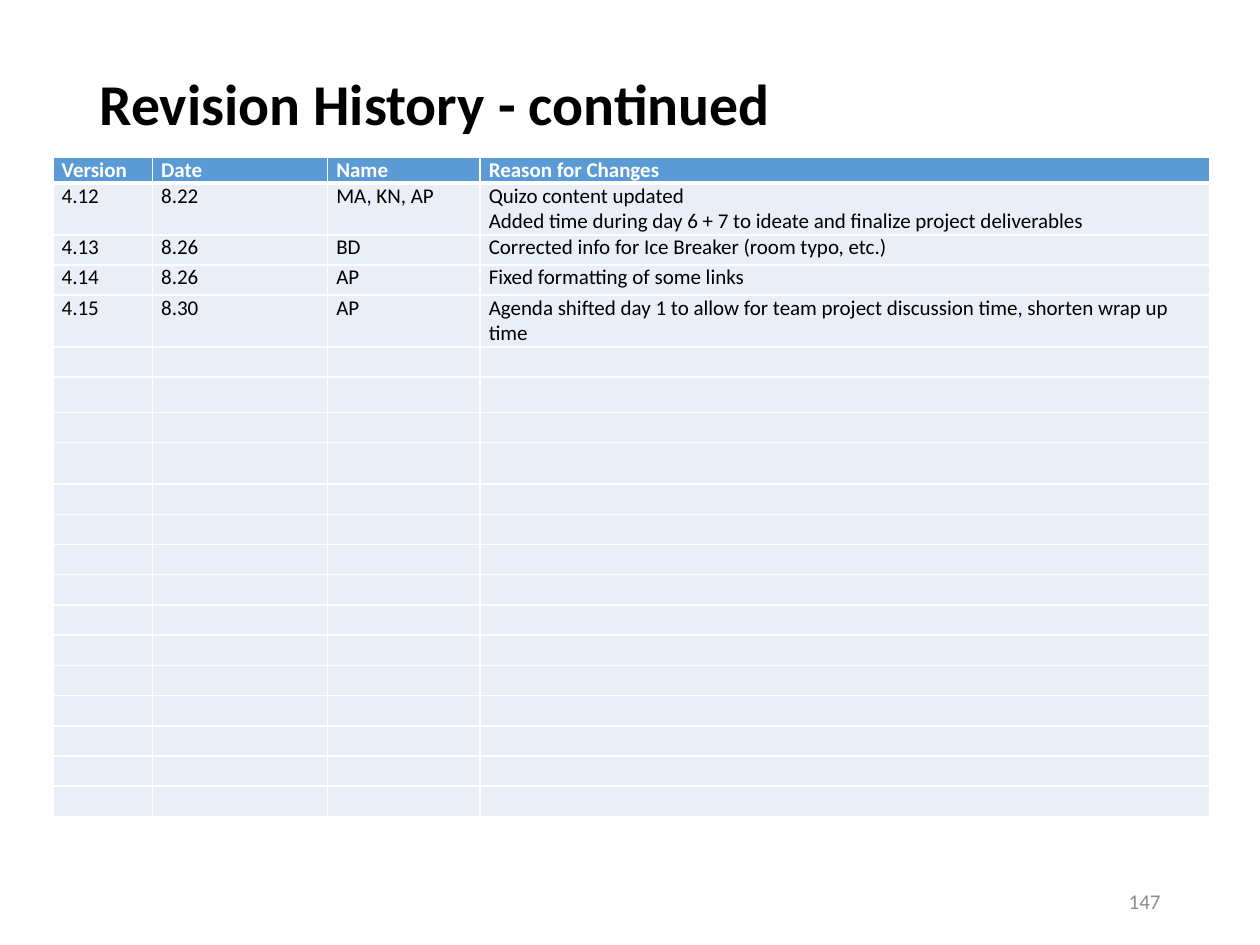
import lxml.etree
import pptx
import pptx.dml.color
import pptx.enum.text
import pptx.oxml.ns
import pptx.util

theme = {
    "font": "Calibri",
    "title_size": 33,
    "body_size": 12,
    "black": "000000",
    "white": "FFFFFF",
    "header": "5B9BD5",
    "body": "EAEFF7",
    "muted": "8C8C8C",
}

headings = ["Version", "Date", "Name", "Reason for Changes"]
revisions = [
    ["4.12", "8.22", "MA, KN, AP",
     "Quizo content updated\nAdded time during day 6 + 7 to ideate and finalize project deliverables"],
    ["4.13", "8.26", "BD", "Corrected info for Ice Breaker (room typo, etc.)"],
    ["4.14", "8.26", "AP", "Fixed formatting of some links"],
    ["4.15", "8.30", "AP",
     "Agenda shifted day 1 to allow for team project discussion time, shorten wrap up time"],
]
blank_rows = 15
rows = [headings] + revisions + [[""] * len(headings)] * blank_rows

presentation = pptx.Presentation()
presentation.slide_width = pptx.util.Inches(10)
presentation.slide_height = pptx.util.Inches(7.5)
unit = presentation.slide_width / 100
slide = presentation.slides.add_slide(presentation.slide_layouts[5])


def add_run(paragraph, text, size, color, bold=False):
    run = paragraph.add_run()
    run.text = text
    run.font.name = theme["font"]
    run.font.size = pptx.util.Pt(size)
    run.font.bold = bold
    run.font.color.rgb = pptx.dml.color.RGBColor.from_string(color)


def add_element(parent, tag, **attributes):
    return lxml.etree.SubElement(parent, pptx.oxml.ns.qn(tag), **attributes)


title = slide.shapes.title
title.left, title.top, title.width, title.height = [
    int(unit * share) for share in (6.9, 4, 86.2, 14.5)
]
title.text_frame.auto_size = pptx.enum.text.MSO_AUTO_SIZE.NONE
title.text_frame.vertical_anchor = pptx.enum.text.MSO_ANCHOR.MIDDLE
paragraph = title.text_frame.paragraphs[0]
paragraph.alignment = pptx.enum.text.PP_ALIGN.LEFT
paragraph.line_spacing = 0.9
add_run(paragraph, "Revision History - continued", theme["title_size"], theme["black"], True)
paragraph.add_line_break()
title_size = str(theme["title_size"] * 100)
add_element(paragraph._p[-1], "a:rPr", sz=title_size)
add_element(paragraph._p, "a:endParaRPr", sz=title_size)

column_shares = [7.9, 13.9, 12.1, 57.9]
row_shares = [2.4] * len(rows)
for row_index, share in {0: 2, 1: 4.1, 4: 4.1, 6: 2.8, 8: 3.3}.items():
    row_shares[row_index] = share

frame = slide.shapes.add_table(
    len(rows), len(headings), int(unit * 4.2), int(unit * 12.5),
    int(unit * sum(column_shares)), int(unit * sum(row_shares)),
)
table = frame.table
table.horz_banding = False
for column, share in zip(table.columns, column_shares):
    column.width = int(unit * share)

for row_index, texts in enumerate(rows):
    table.rows[row_index].height = int(unit * row_shares[row_index])
    is_header = row_index == 0
    for column_index, text in enumerate(texts):
        cell = table.cell(row_index, column_index)
        cell.margin_left = cell.margin_right = pptx.util.Inches(0.07)
        cell.margin_top = cell.margin_bottom = 0
        for side in "LRTB":
            thick = (is_header and side == "B") or (row_index == 1 and side == "T")
            line = add_element(cell._tc.get_or_add_tcPr(), "a:ln" + side,
                               w=str(pptx.util.Pt(3 if thick else 1)))
            add_element(add_element(line, "a:solidFill"), "a:srgbClr", val=theme["white"])
        cell.fill.solid()
        cell.fill.fore_color.rgb = pptx.dml.color.RGBColor.from_string(
            theme["header" if is_header else "body"])
        for line_index, content in enumerate(text.split("\n")):
            paragraph = (cell.text_frame.add_paragraph() if line_index
                         else cell.text_frame.paragraphs[0])
            if content:
                add_run(paragraph, content, theme["body_size"],
                        theme["white" if is_header else "black"], is_header)
            else:
                add_element(paragraph._p, "a:endParaRPr", sz=str(theme["body_size"] * 100))

number_box = slide.shapes.add_textbox(
    *[int(unit * share) for share in (70.6, 69.5, 22.5, 4)])
number_box.text_frame.word_wrap = True
number_box.text_frame.vertical_anchor = pptx.enum.text.MSO_ANCHOR.MIDDLE
paragraph = number_box.text_frame.paragraphs[0]
paragraph.alignment = pptx.enum.text.PP_ALIGN.RIGHT
add_run(paragraph, "147", theme["body_size"], theme["muted"])

presentation.save("out.pptx")
